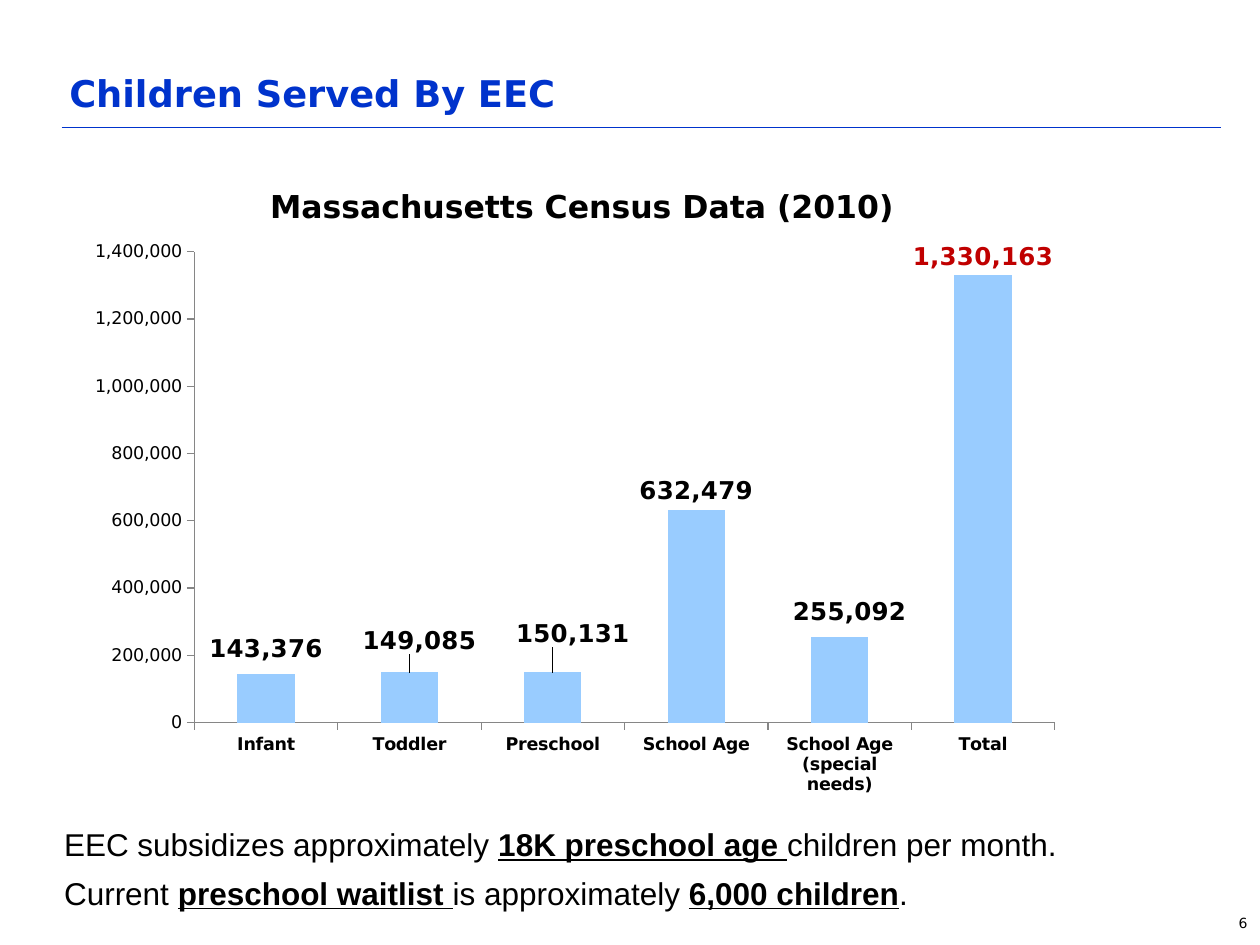
from dataclasses import dataclass

from lxml import etree
from pptx import Presentation
from pptx import util as u
from pptx.chart.data import CategoryChartData
from pptx.dml.color import RGBColor
from pptx.enum import chart as charts, shapes, text
from pptx.oxml import ns


@dataclass(frozen=True)
class Theme:
    """Colours, fonts and type sizes of the slide."""
    blue: str = "0033CC"
    bar: str = "99CCFF"
    red: str = "C00000"
    black: str = "000000"
    white: str = "FFFFFF"
    axis: str = "868686"
    display: str = "DejaVu Sans"
    body: str = "Arial"
    title_size: float = 21
    statement_size: float = 18
    chart_title_size: float = 18
    label_size: float = 14
    axis_size: float = 10
    number_size: float = 8


THEME = Theme()
CENSUS_TITLE = "Massachusetts Census Data (2010)"
CENSUS = {
    "Infant": 143376,
    "Toddler": 149085,
    "Preschool": 150131,
    "School Age": 632479,
    "School Age (special needs)": 255092,
    "Total": 1330163,
}
LABEL_SHIFTS = {
    "Infant": (0, -0.01),
    "Toddler": (0.01, -0.02),
    "Preschool": (0.02, -0.03),
    "School Age (special needs)": (0.01, -0.01),
}
STATEMENTS = [
    [("EEC subsidizes approximately ", False), ("18K preschool age ", True),
     ("children per month.", False)],
    [("Current ", False), ("preschool waitlist ", True), ("is approximately ", False),
     ("6,000 children", True), (".", False)],
]


def style_font(font, size, face=THEME.display, color=THEME.black, bold=False, underline=False):
    """Set the size, face, colour and emphasis of a font."""
    font.size, font.name = u.Pt(size), face
    font.bold, font.underline = bold, underline
    font.color.rgb = RGBColor.from_string(color)


def add_run(paragraph, wording, **style):
    """Add a run of text with its format to a paragraph."""
    run = paragraph.add_run()
    run.text = wording
    style_font(run.font, **style)


def style_line(line, color):
    """Give a line its colour and the common thin width."""
    line.color.rgb = RGBColor.from_string(color)
    line.width = u.Pt(0.75)


def set_layout(parent, after, **values):
    """Place a chart part by hand, with its layout following the given child."""
    for old in parent.findall(ns.qn("c:layout")):
        parent.remove(old)
    layout = etree.Element(ns.qn("c:layout"))
    manual = etree.SubElement(layout, ns.qn("c:manualLayout"))
    for tag, value in values.items():
        etree.SubElement(manual, ns.qn(f"c:{tag}")).set("val", str(value))
    anchor = parent.find(ns.qn(after)) if after else None
    parent.insert(0 if anchor is None else parent.index(anchor) + 1, layout)


def add_header(slide, left, top, width, height):
    """Place the slide title and the rule below it."""
    title = slide.shapes.title
    title.left, title.top = u.Inches(left), u.Inches(top)
    title.width, title.height = u.Inches(width), u.Inches(height)
    frame = title.text_frame
    frame.vertical_anchor = text.MSO_ANCHOR.BOTTOM
    frame.paragraphs[0].alignment = text.PP_ALIGN.LEFT
    add_run(frame.paragraphs[0], "Children Served By EEC",
            size=THEME.title_size, color=THEME.blue, bold=True)
    rule_left, rule_top = left + 0.04, u.Inches(top + height + 0.05)
    rule = slide.shapes.add_connector(
        shapes.MSO_CONNECTOR.STRAIGHT, u.Inches(rule_left), rule_top,
        u.Inches(rule_left + 9.2), rule_top)
    style_line(rule.line, THEME.blue)
    etree.SubElement(rule.element.spPr, ns.qn("a:effectLst"))


def add_axes(chart):
    """Format the category and value axes."""
    categories, values = chart.category_axis, chart.value_axis
    for axis, bold in ((categories, True), (values, False)):
        style_font(axis.tick_labels.font, THEME.axis_size, bold=bold)
        style_line(axis.format.line, THEME.axis)
        axis.major_tick_mark = charts.XL_TICK_MARK.OUTSIDE
    values.minimum_scale, values.maximum_scale, values.major_unit = 0, 1400000, 200000
    values.tick_labels.number_format = "#,##0"
    values.tick_labels.number_format_is_linked = False
    values.has_major_gridlines = True
    style_line(values.major_gridlines.format.line, THEME.white)


def add_value_labels(plot):
    """Label each column with its value, the total in red."""
    plot.has_data_labels = True
    labels = plot.data_labels
    labels.show_value = True
    labels.number_format, labels.number_format_is_linked = "#,##0", False
    labels.position = charts.XL_LABEL_POSITION.OUTSIDE_END
    style_font(labels.font, THEME.label_size, bold=True)
    series = plot.series[0]
    for index, category in enumerate(CENSUS):
        label = series.points[index].data_label
        style_font(label.font, THEME.label_size, bold=True,
                   color=THEME.red if category == "Total" else THEME.black)
        label.position = charts.XL_LABEL_POSITION.OUTSIDE_END
    for entry, category in zip(series.data_labels._element.findall(ns.qn("c:dLbl")), CENSUS):
        if category in LABEL_SHIFTS:
            x, y = LABEL_SHIFTS[category]
            set_layout(entry, "c:idx", x=x, y=y)


def add_census_chart(slide, left, top, width, height):
    """Place the column chart of children by age group."""
    data = CategoryChartData(number_format="#,##0")
    data.categories = list(CENSUS)
    data.add_series(CENSUS_TITLE, list(CENSUS.values()))
    chart = slide.shapes.add_chart(
        charts.XL_CHART_TYPE.COLUMN_CLUSTERED, u.Inches(left), u.Inches(top),
        u.Inches(width), u.Inches(height), data).chart
    style_font(chart.font, THEME.axis_size)
    chart.has_legend = False
    chart.has_title = True
    add_run(chart.chart_title.text_frame.paragraphs[0], CENSUS_TITLE,
            size=THEME.chart_title_size, bold=True)
    chart.chart_title.include_in_layout = False
    set_layout(chart.chart_title._element, "c:tx",
               xMode="edge", yMode="edge", x=0.19, y=0.04)
    plot = chart.plots[0]
    plot.gap_width, plot.vary_by_categories = 150, False
    fill = plot.series[0].format.fill
    fill.solid()
    fill.fore_color.rgb = RGBColor.from_string(THEME.bar)
    add_axes(chart)
    add_value_labels(plot)
    set_layout(chart._chartSpace.chart.plotArea, None, layoutTarget="inner",
               xMode="edge", yMode="edge", x=0.12, y=0.15, w=0.86, h=0.72)


def add_text_box(slide, left, top, width, height):
    """Add a wrapping text box and return its text frame."""
    frame = slide.shapes.add_textbox(
        u.Inches(left), u.Inches(top), u.Inches(width), u.Inches(height)).text_frame
    frame.word_wrap = True
    return frame


def add_statements(slide, left, top, width, height):
    """Place the two statements on subsidies and the waitlist."""
    frame = add_text_box(slide, left, top, width, height)
    for index, statement in enumerate(STATEMENTS):
        paragraph = frame.add_paragraph() if index else frame.paragraphs[0]
        paragraph.space_before = u.Pt(6 if index else 0)
        for wording, stressed in statement:
            add_run(paragraph, wording, size=THEME.statement_size, face=THEME.body,
                    bold=stressed, underline=stressed)


def add_slide_number(slide, left, top, width, height):
    """Place the slide number in the corner."""
    paragraph = add_text_box(slide, left, top, width, height).paragraphs[0]
    paragraph.alignment = text.PP_ALIGN.RIGHT
    add_run(paragraph, "6", size=THEME.number_size)


def main():
    """Build and save the slide."""
    deck = Presentation()
    deck.slide_width, deck.slide_height = u.Inches(10), u.Inches(7.5)
    slide = deck.slides.add_slide(deck.slide_layouts[5])
    add_header(slide, 0.45, 0.17, 8.29, 0.79)
    add_slide_number(slide, 7.89, 7.21, 2.11, 0.29)
    add_census_chart(slide, 0.59, 1.22, 7.94, 5.19)
    add_statements(slide, 0.41, 6.5, 9.45, 1.09)
    deck.save("out.pptx")


if __name__ == "__main__":
    main()
